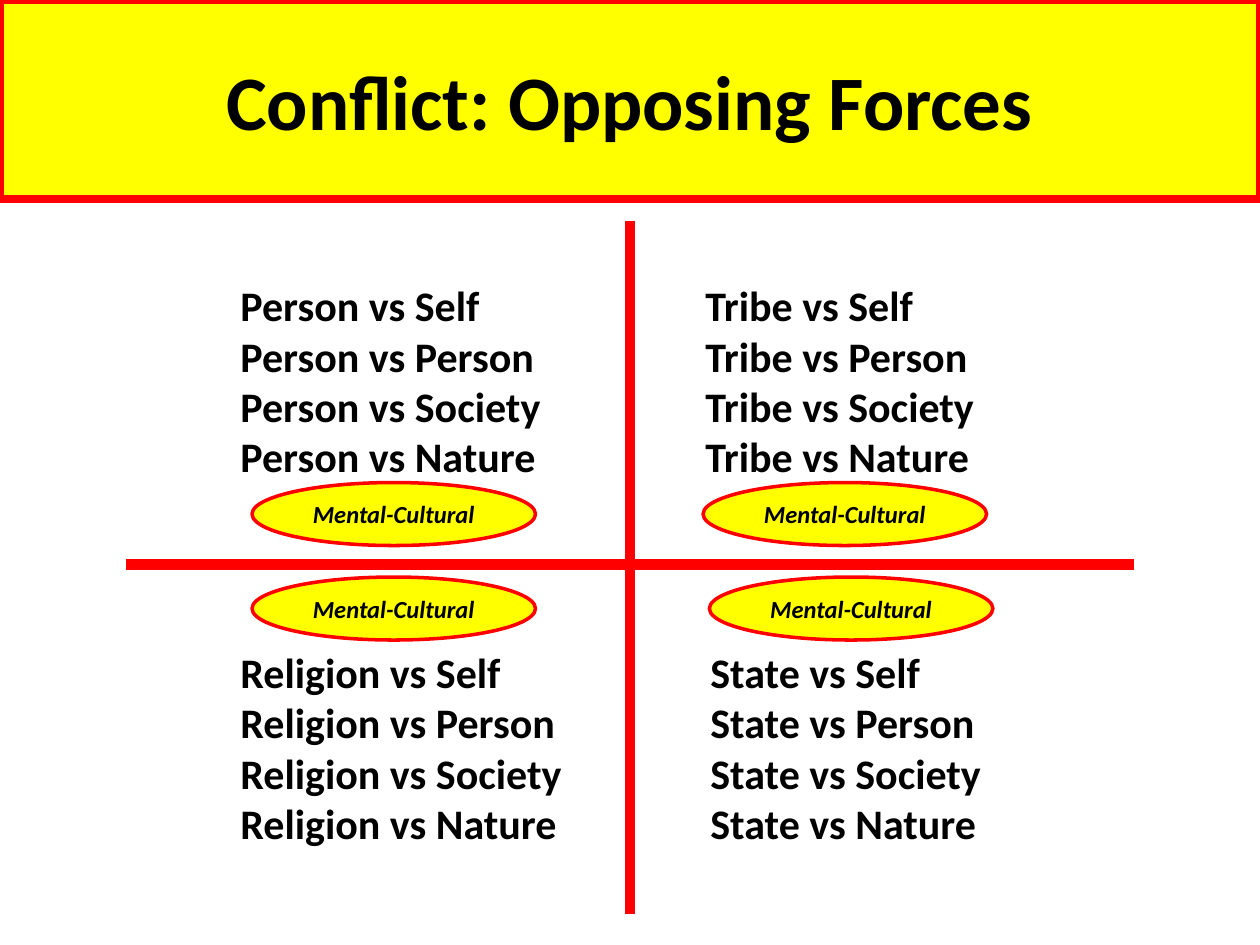
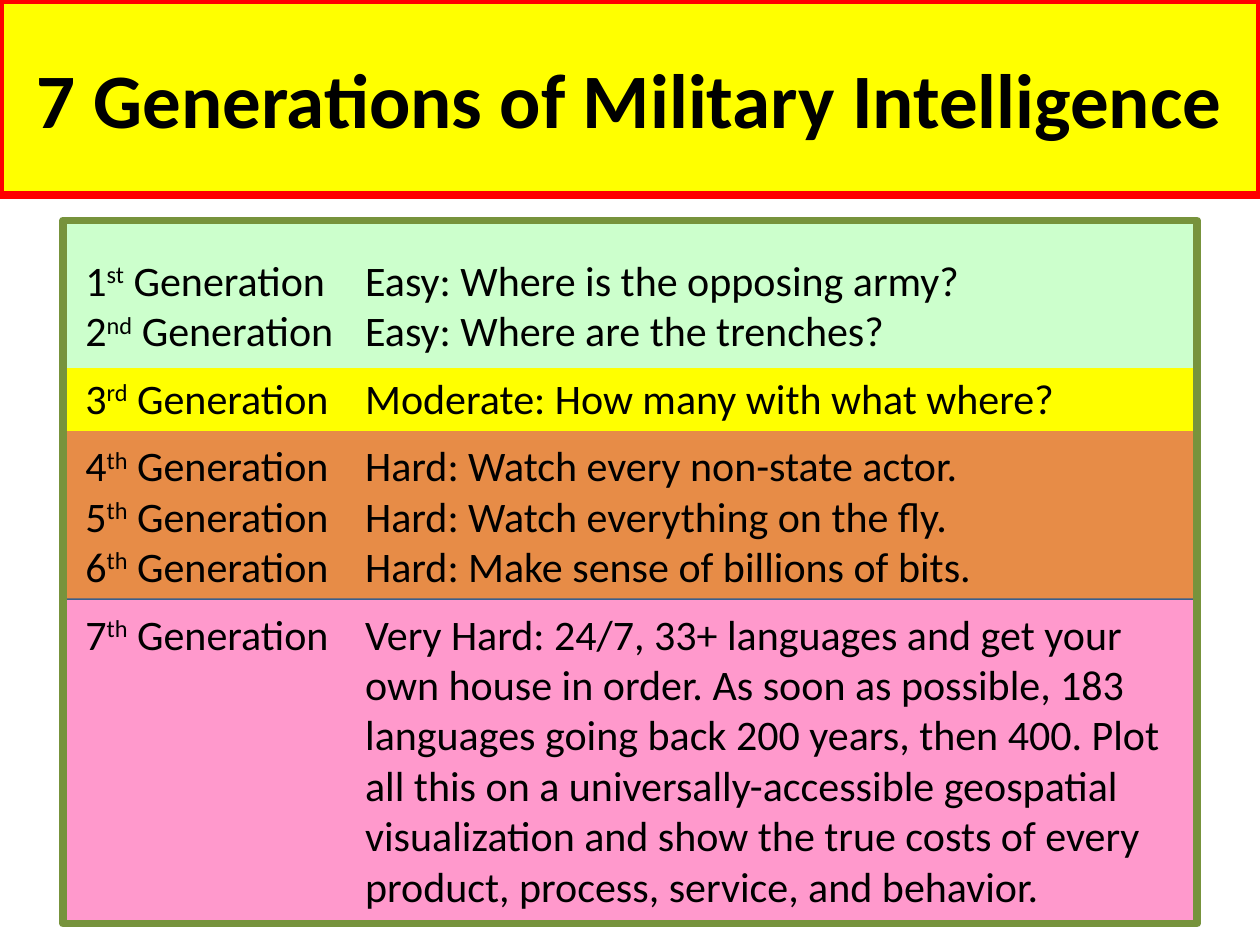
from pptx import Presentation, util as u
from pptx.dml.color import RGBColor
from pptx.enum import shapes, text
from pptx.oxml.ns import qn
from lxml import etree

BLACK = RGBColor(0, 0, 0)
RED = RGBColor(0xFF, 0, 0)
YELLOW = RGBColor(0xFF, 0xFF, 0)
MINT = RGBColor(0xCC, 0xFF, 0xCC)
ORANGE = RGBColor(0xE7, 0x8C, 0x47)
PINK = RGBColor(0xFF, 0x99, 0xCC)
NAVY = RGBColor(0x3A, 0x5F, 0x8C)
OLIVE = RGBColor(0x77, 0x93, 0x3C)
FONT = "Calibri"
WIDTH, HEIGHT = 10, 7.5

# Slide 1: each column holds (side, list left, badge left) quadrants, top one first
OPPONENTS = ["Self", "Person", "Society", "Nature"]
BADGE = "Mental-Cultural"
COLUMNS = [
    [("Person", 1.81, 2), ("Religion", 1.81, 2)],
    [("Tribe", 5.5, 5.58), ("State", 5.54, 5.63)],
]
LIST_TOPS = (2.17, 5.08)
BADGE_TOPS = (3.83, 4.58)
AXIS_X, AXIS_Y = WIDTH / 2, 4.48

# Slide 2: difficulty bands as (fill, line, height, [(number, suffix, question)])
BANDS = [
    (MINT, None, 1.17, [("1", "st", "Easy: Where is the opposing army?"),
                        ("2", "nd", "Easy: Where are the trenches?")]),
    (YELLOW, None, 0.5, [("3", "rd", "Moderate: How many with what where?")]),
    (ORANGE, None, 1.33, [("4", "th", "Hard: Watch every non-state actor."),
                          ("5", "th", "Hard: Watch everything on the fly."),
                          ("6", "th", "Hard: Make sense of billions of bits.")]),
    (PINK, NAVY, 2.57, [("7", "th", "Very Hard: 24/7, 33+ languages and get your own house in "
                         "order. As soon as possible, 183 languages going back 200 years, then "
                         "400. Plot all this on a universally-accessible geospatial "
                         "visualization and show the true costs of every product, process, "
                         "service, and behavior.")]),
]
BANDS_LEFT, BANDS_TOP, BANDS_WIDTH, FRAME_HEIGHT = 0.5, 1.75, 9, 5.58
QUESTION_INDENT = 2.22


def inches(*lengths):
    return [u.Inches(length) for length in lengths]


def paint(shape, fill, line, line_width=0):
    if fill is None:
        shape.fill.background()
    else:
        shape.fill.solid()
        shape.fill.fore_color.rgb = fill
    if line is None:
        shape.line.fill.background()
    else:
        shape.line.color.rgb = line
        shape.line.width = u.Pt(line_width)


def add_run(paragraph, words, size, bold=False, italic=False, raised=False):
    run = paragraph.add_run()
    run.text = words
    font = run.font
    font.name, font.size, font.bold, font.italic = FONT, u.Pt(size), bold, italic
    font.color.rgb = BLACK
    if raised:
        run._r.get_or_add_rPr().set("baseline", "30000")


def add_paragraphs(frame, count):
    """Return the frame's first paragraph followed by count - 1 new ones."""
    return [frame.paragraphs[0]] + [frame.add_paragraph() for _ in range(count - 1)]


def add_preset(parent, preset, box, fill, line, line_width=0):
    shape = parent.shapes.add_shape(preset, *inches(*box))
    shape.shadow.inherit = False
    paint(shape, fill, line, line_width)
    return shape


def add_text_area(parent, box):
    frame = parent.shapes.add_textbox(*inches(*box)).text_frame
    frame.word_wrap = True
    return frame


def add_titled_slide(deck, heading, banner_height):
    slide = deck.slides.add_slide(deck.slide_layouts[5])
    title = slide.shapes.title
    title.left, title.top, title.width, title.height = inches(0, 0, WIDTH, banner_height)
    paint(title, YELLOW, RED, 4.5)
    title.text_frame.vertical_anchor = text.MSO_ANCHOR.MIDDLE
    paragraph = title.text_frame.paragraphs[0]
    paragraph.alignment = text.PP_ALIGN.CENTER
    add_run(paragraph, heading, 44, bold=True)
    return slide


def add_axis(slide, *ends):
    axis = slide.shapes.add_connector(shapes.MSO_CONNECTOR.STRAIGHT, *inches(*ends))
    axis.line.color.rgb = RED
    axis.line.width = u.Pt(6)
    etree.SubElement(axis._element.spPr, qn("a:effectLst"))


def add_quadrant(column, side, list_left, list_top, badge_left, badge_top):
    frame = add_text_area(column, (list_left, list_top, 2.8, 1.72))
    for paragraph, opponent in zip(add_paragraphs(frame, len(OPPONENTS)), OPPONENTS):
        add_run(paragraph, f"{side} vs {opponent}", 24, bold=True)
    badge = add_preset(column, shapes.MSO_SHAPE.OVAL, (badge_left, badge_top, 2.25, 0.5),
                       YELLOW, RED, 2)
    badge.text_frame.word_wrap = False
    badge.text_frame.vertical_anchor = text.MSO_ANCHOR.MIDDLE
    paragraph = badge.text_frame.paragraphs[0]
    paragraph.alignment = text.PP_ALIGN.CENTER
    add_run(paragraph, BADGE, 14, bold=True, italic=True)


def build_conflict(deck):
    slide = add_titled_slide(deck, "Conflict: Opposing Forces", 1.58)
    add_axis(slide, AXIS_X, 1.75, AXIS_X, 7.25)
    add_axis(slide, 1, AXIS_Y, 9, AXIS_Y)
    for quadrants in COLUMNS:
        column = slide.shapes.add_group_shape()
        for (side, list_left, badge_left), list_top, badge_top in zip(
                quadrants, LIST_TOPS, BADGE_TOPS):
            add_quadrant(column, side, list_left, list_top, badge_left, badge_top)


def build_generations(deck):
    slide = add_titled_slide(deck, "7 Generations of Military Intelligence", 1.55)
    rectangle = shapes.MSO_SHAPE.RECTANGLE
    bottom = BANDS_TOP + sum(height for _, _, height, _ in BANDS)
    for fill, line, height, _ in reversed(BANDS):
        bottom -= height
        add_preset(slide, rectangle, (BANDS_LEFT, bottom, BANDS_WIDTH, height), fill, line, 2)
    add_preset(slide, rectangle, (BANDS_LEFT, BANDS_TOP, BANDS_WIDTH, FRAME_HEIGHT),
               None, OLIVE, 4.5)

    frame = add_text_area(slide, (0.58, 1.97, 8.8, 5.35))
    rows = [(index == 0, row) for *_, band in BANDS for index, row in enumerate(band)]
    for paragraph, (opens_band, (number, suffix, question)) in zip(
            add_paragraphs(frame, len(rows)), rows):
        if opens_band and paragraph is not frame.paragraphs[0] and number != "1":
            paragraph.space_before = u.Pt(9.75)
        properties = paragraph._p.get_or_add_pPr()
        properties.set("marL", str(u.Inches(QUESTION_INDENT)))
        properties.set("indent", str(-u.Inches(QUESTION_INDENT)))
        add_run(paragraph, number, 24)
        add_run(paragraph, suffix, 24, raised=True)
        add_run(paragraph, f" Generation\t{question}", 24)


def main():
    deck = Presentation()
    deck.slide_width, deck.slide_height = inches(WIDTH, HEIGHT)
    build_conflict(deck)
    build_generations(deck)
    deck.save("out.pptx")


if __name__ == "__main__":
    main()
